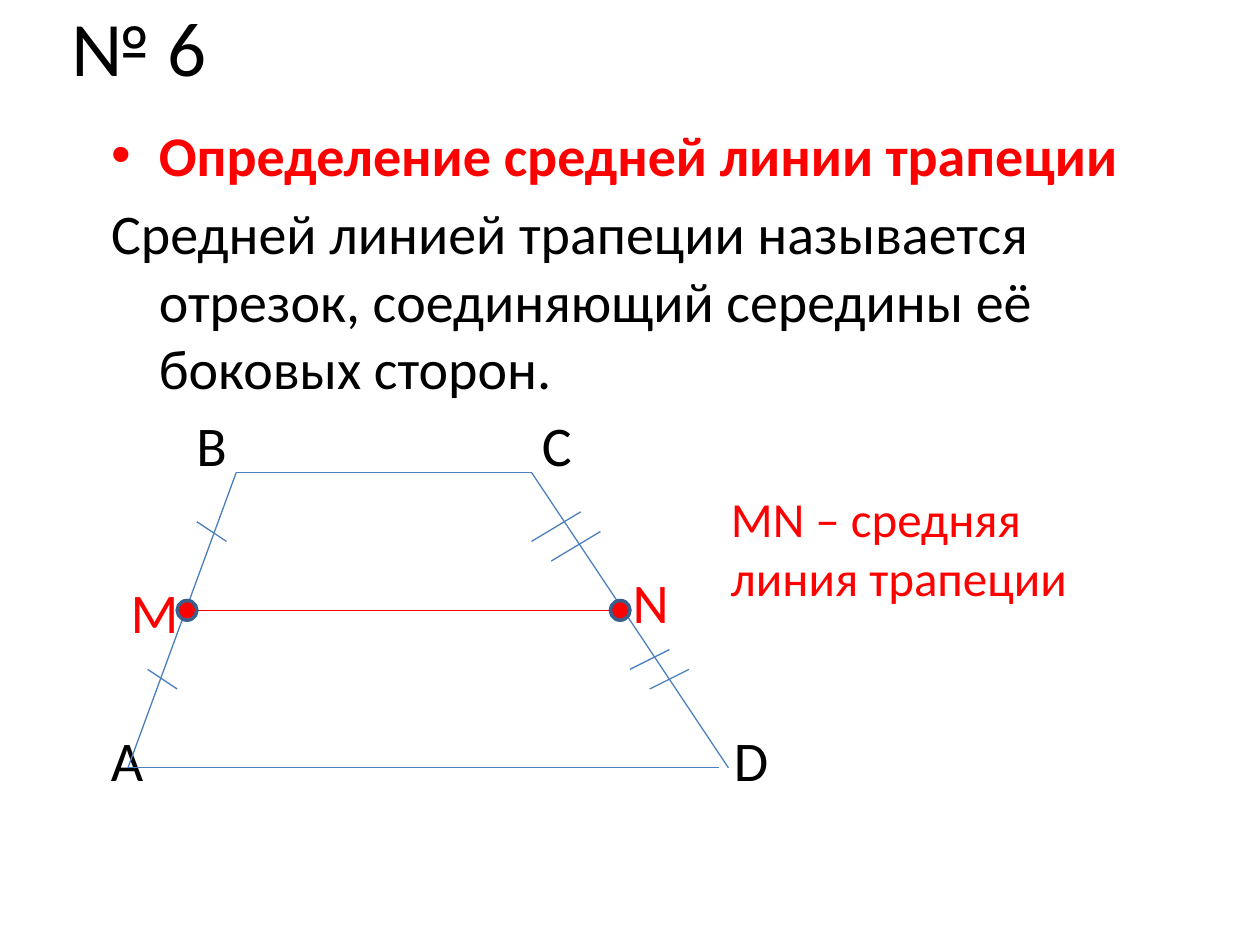
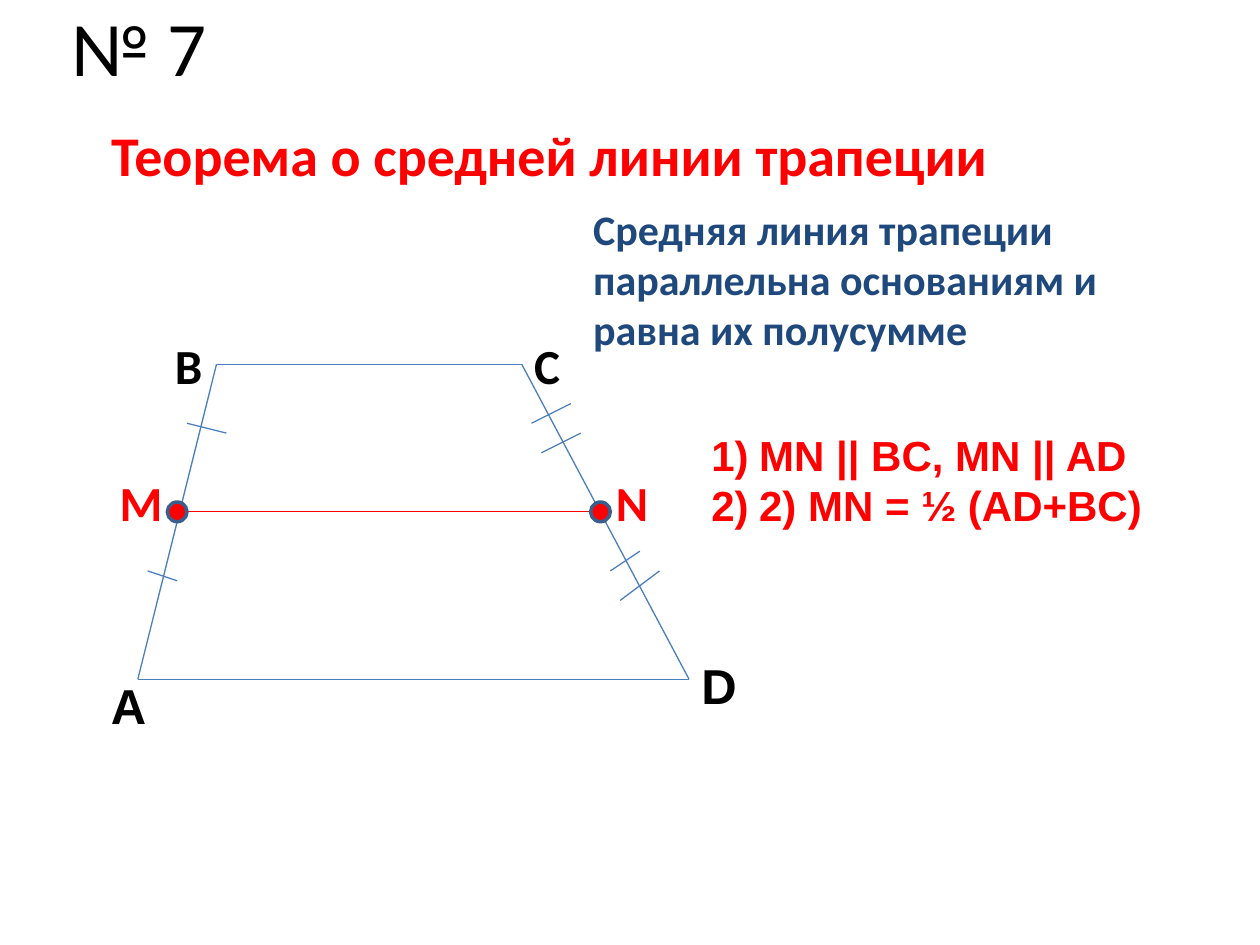
from pptx import Presentation
from pptx.dml.color import RGBColor
from pptx.enum.shapes import MSO_CONNECTOR as Connector, MSO_SHAPE as Shape
from pptx.enum.text import MSO_ANCHOR as Anchor, MSO_AUTO_SIZE as AutoSize, PP_ALIGN as Align
from pptx.oxml.ns import qn
from pptx.util import Inches, Pt
from lxml.etree import SubElement

COLUMNS = 128
SLIDE_WIDTH, SLIDE_HEIGHT = Inches(10), Inches(7.5)
CELL = SLIDE_WIDTH / COLUMNS

BLACK, RED, NAVY = "000000", "FF0000", "1F497D"
SIDE_BLUE, DOT_EDGE = "4B7EBC", "3A5F8C"
DOT_SIZE = 2
HANGING = Inches(0.38)


def rgb(hex_string):
    return RGBColor.from_string(hex_string)


def cells(*counts):
    """Turn counts of grid cells into lengths."""
    return [round(count * CELL) for count in counts]


def add_run(paragraph, text, size, color, bold=False, font="Calibri"):
    run = paragraph.add_run()
    run.text = text
    run.font.name = font
    run.font.size = Pt(size)
    run.font.bold = bold
    run.font.color.rgb = rgb(color)


def set_bullet(paragraph, tag, **attributes):
    """Give a paragraph a hanging indent and one bullet element."""
    properties = paragraph._p.get_or_add_pPr()
    properties.set("marL", str(HANGING))
    properties.set("indent", str(-HANGING))
    SubElement(properties, qn(tag), attributes)


def place(placeholder, *area):
    (placeholder.left, placeholder.top,
     placeholder.width, placeholder.height) = cells(*area)


def add_task_slide(deck, number, body_columns):
    """Add a slide with its number as title; return it with its body frame."""
    slide = deck.slides.add_slide(deck.slide_layouts[1])
    title, body = slide.placeholders
    place(title, 6, 0, 115.2, 9.2)
    title.text_frame.vertical_anchor = Anchor.MIDDLE
    heading = title.text_frame.paragraphs[0]
    heading.alignment = Align.LEFT
    add_run(heading, f"№ {number}", 44, BLACK)
    place(body, 10, 11.6, body_columns, 74.4)
    return slide, body.text_frame


def add_frame(slide, *area):
    frame = slide.shapes.add_textbox(*cells(*area)).text_frame
    frame.word_wrap = True
    frame.auto_size = AutoSize.SHAPE_TO_FIT_TEXT
    return frame


def add_note(slide, area, text, size, color, **style):
    add_run(add_frame(slide, *area).paragraphs[0], text, size, color, **style)


def add_label(slide, letter, corner, size, color=BLACK, **style):
    add_note(slide, (*corner, 7, 8), letter, size, color, **style)


def add_line(slide, start, end, color=SIDE_BLUE):
    line = slide.shapes.add_connector(Connector.STRAIGHT, *cells(*start, *end))
    line.line.color.rgb = rgb(color)
    line.line.width = Pt(0.75)
    SubElement(line._element.spPr, qn("a:effectLst"))


def add_dot(slide, center):
    x, y = center
    dot = slide.shapes.add_shape(
        Shape.OVAL, *cells(x - DOT_SIZE / 2, y - DOT_SIZE / 2, DOT_SIZE, DOT_SIZE))
    dot.shadow.inherit = False
    dot.fill.solid()
    dot.fill.fore_color.rgb = rgb(RED)
    dot.line.color.rgb = rgb(DOT_EDGE)
    dot.line.width = Pt(2)


def add_trapezoid(slide, sides, midline, ticks):
    """Draw the sides, the equal-length ticks and the midline with its end dots."""
    for start, end in sides + ticks:
        add_line(slide, start, end)
    add_line(slide, *midline, RED)
    for center in midline:
        add_dot(slide, center)


def add_definition(deck):
    slide, body = add_task_slide(deck, 6, 108)
    term = body.paragraphs[0]
    term.space_before = Pt(0)
    set_bullet(term, "a:buChar", char="•")
    add_run(term, "Определение средней линии трапеции", 32, RED, bold=True)
    definition = body.add_paragraph()
    set_bullet(definition, "a:buNone")
    add_run(definition, "Средней линией трапеции называется отрезок, "
            "соединяющий середины её боковых сторон.", 32, BLACK)

    for letter, corner in {"A": (10, 73.1), "B": (18.7, 41.1),
                           "C": (53.8, 41.1), "D": (73.3, 73.1)}.items():
        add_label(slide, letter, corner, 32)
    add_label(slide, "M", (12, 58), 32, RED)
    add_label(slide, "N", (63, 57), 32, RED)
    add_note(slide, (73, 49, 43, 13.3), "MN – средняя линия трапеции", 28, RED)

    a, b, c, d = (13, 78), (24, 48), (54, 48), (74, 78)
    add_trapezoid(
        slide,
        sides=[(b, c), (b, a), (c, d), (a, (73, 78))],
        midline=[(19, 62), (63, 62)],
        ticks=[((20, 53), (23, 55)), ((15, 68), (18, 70)),
               ((59, 52), (54, 55)), ((61, 54), (56, 57)),
               ((68, 66), (64, 68)), ((70, 68), (66, 70))])


def add_theorem(deck):
    slide, body = add_task_slide(deck, 7, 109)
    theorem = body.paragraphs[0]
    theorem.space_before = Pt(0)
    set_bullet(theorem, "a:buNone")
    add_run(theorem, "Теорема о средней линии трапеции", 32, RED, bold=True)

    for letter, corner in {"B": (16.5, 33.5), "C": (53, 33.5)}.items():
        add_label(slide, letter, corner, 28, bold=True)
    for letter, corner in {"M": (10.9, 47.4), "N": (61.3, 47.4)}.items():
        add_label(slide, letter, corner, 28, RED, bold=True)
    for letter, corner in {"A": (10, 68), "D": (70, 66)}.items():
        add_label(slide, letter, corner, 28, bold=True, font="Arial")

    a, b, c, d = (14, 69), (22, 37), (53, 37), (70, 69)
    add_trapezoid(
        slide,
        sides=[(b, c), (b, a), (a, d), (c, d)],
        midline=[(18, 52), (61, 52)],
        ticks=[((19, 43), (23, 44)), ((15, 58), (18, 59)),
               ((58, 41), (54, 43)), ((59, 44), (55, 46)),
               ((65, 56), (62, 58)), ((67, 58), (63, 61))])

    add_note(slide, (59, 20, 60, 16.8), "Средняя линия трапеции параллельна "
             "основаниям и равна их полусумме", 24, NAVY, bold=True)
    claims = add_frame(slide, 71, 43, 47, 11.6)
    for index, claim in enumerate(["MN || BC, MN || AD", "2) MN = ½ (AD+BC)"]):
        paragraph = claims.add_paragraph() if index else claims.paragraphs[0]
        set_bullet(paragraph, "a:buAutoNum", type="arabicParenR")
        add_run(paragraph, claim, 24, RED, bold=True, font="Arial")


def main():
    deck = Presentation()
    deck.slide_width, deck.slide_height = SLIDE_WIDTH, SLIDE_HEIGHT
    add_definition(deck)
    add_theorem(deck)
    deck.save("out.pptx")


if __name__ == "__main__":
    main()
